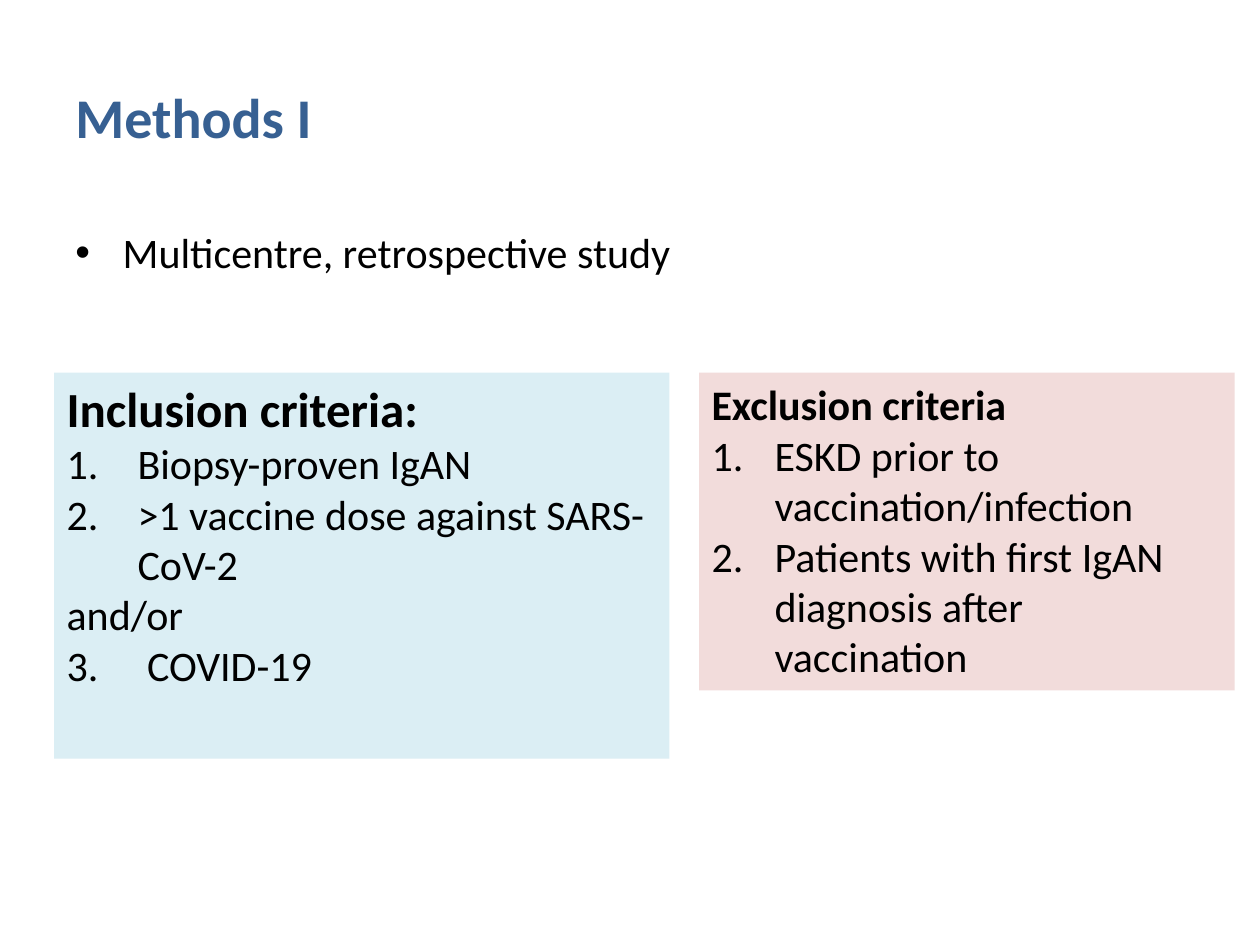
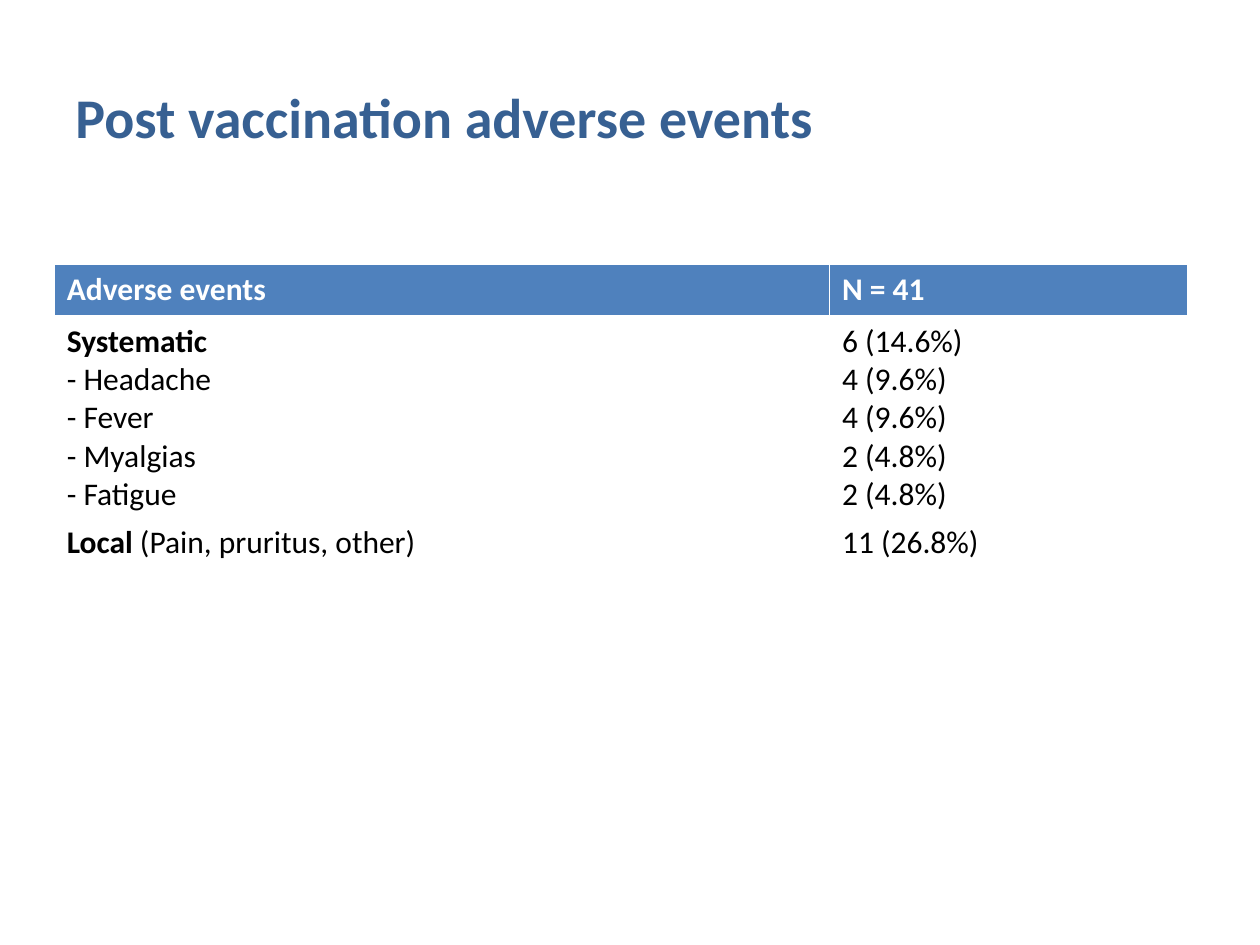
from lxml.etree import SubElement
from pptx import Presentation
from pptx.dml.color import RGBColor
from pptx.enum.shapes import MSO_SHAPE
from pptx.enum.text import MSO_ANCHOR, PP_ALIGN
from pptx.oxml.ns import qn
from pptx.util import Pt

FONT = "Calibri"
BLACK, WHITE, TITLE_BLUE = "000000", "FFFFFF", "376092"
HEADER_BLUE, INCLUSION_BLUE, EXCLUSION_PINK = "4F81BD", "DBEEF4", "F2DCDB"
LEFT, WIDTH = 36, 648
PANEL_LEFT, PANEL_TOP = 31, 213

STUDY_DESIGN = "Multicentre, retrospective study"
PANELS = [
    dict(left=PANEL_LEFT, width=351.5, height=220.5, color=INCLUSION_BLUE,
         heading="Inclusion criteria:", heading_size=28, hang=40.5,
         lines=[("1.", "Biopsy-proven IgAN"),
                ("1.", ">1 vaccine dose against SARS-CoV-2"),
                (None, "and/or"),
                (None, "3.\t COVID-19")]),
    dict(left=399.5, width=306, height=181.5, color=EXCLUSION_PINK,
         heading="Exclusion criteria", heading_size=24, hang=36,
         lines=[("1.", "ESKD prior to vaccination/infection"),
                ("1.", "Patients with first IgAN diagnosis after vaccination")]),
]

COLUMNS, ROWS = (443, 205), (29.2, 115.1, 29.2)
HEADER = ("Adverse events", "N = 41")
SYSTEMATIC = [("Systematic", "6 (14.6%)"), ("Headache", "4 (9.6%)"),
              ("Fever", "4 (9.6%)"), ("Myalgias", "2 (4.8%)"),
              ("Fatigue", "2 (4.8%)")]
LOCAL = ("Local", " (Pain, pruritus, other)", "11 (26.8%)")


def rgb(color):
    return RGBColor.from_string(color)


def add_span(para, text, size=24, color=BLACK, bold=False):
    span = para.add_run()
    span.text = text
    span.font.name = FONT
    span.font.size = Pt(size)
    span.font.bold = bold
    span.font.color.rgb = rgb(color)


def add_para(frame, text, bullet=None, hang=0, before=0, **style):
    para = frame.paragraphs[0]
    if para.runs:
        para = frame.add_paragraph()
    para.alignment = PP_ALIGN.LEFT
    para.space_before = Pt(before)
    properties = para._p.get_or_add_pPr()
    properties.set("marL", str(Pt(hang)))
    properties.set("indent", str(-Pt(hang)))
    if bullet == "1.":
        SubElement(properties, qn("a:buFont"), typeface="+mj-lt")
        SubElement(properties, qn("a:buAutoNum"), type="arabicPeriod")
    elif bullet:
        SubElement(properties, qn("a:buFont"), typeface="Arial" if bullet == "•" else FONT)
        SubElement(properties, qn("a:buChar"), char=bullet)
    add_span(para, text, **style)
    return para


def add_text_box(page, left, top, width, height, anchor=MSO_ANCHOR.TOP):
    box = page.shapes.add_textbox(Pt(left), Pt(top), Pt(width), Pt(height))
    box.text_frame.word_wrap = True
    box.text_frame.vertical_anchor = anchor
    return box.text_frame


def add_page(deck, title):
    page = deck.slides.add_slide(deck.slide_layouts[6])
    frame = add_text_box(page, LEFT, 21.6, WIDTH, 90, MSO_ANCHOR.MIDDLE)
    add_para(frame, title, size=32, color=TITLE_BLUE, bold=True)
    return page


def add_panel(page, left, width, height, color, heading, heading_size, hang, lines):
    box = page.shapes.add_shape(MSO_SHAPE.RECTANGLE, Pt(left), Pt(PANEL_TOP),
                                Pt(width), Pt(height))
    box.shadow.inherit = False
    box.fill.solid()
    box.fill.fore_color.rgb = rgb(color)
    box.line.fill.background()
    frame = box.text_frame
    frame.word_wrap = True
    frame.vertical_anchor = MSO_ANCHOR.TOP
    add_para(frame, heading, size=heading_size, bold=True)
    for bullet, text in lines:
        add_para(frame, text, bullet=bullet, hang=hang)


def build_methods(deck):
    page = add_page(deck, "Methods I")
    frame = add_text_box(page, LEFT, 126, WIDTH, 356.4)
    add_para(frame, STUDY_DESIGN, bullet="•", hang=27, before=4.8)
    for panel in PANELS:
        add_panel(page, **panel)


def build_adverse_events(deck):
    page = add_page(deck, "Post vaccination adverse events")
    table = page.shapes.add_table(len(ROWS), len(COLUMNS), Pt(PANEL_LEFT), Pt(151.2),
                                  Pt(sum(COLUMNS)), Pt(sum(ROWS))).table
    for column, width in zip(table.columns, COLUMNS):
        column.width = Pt(width)
    for number, height in enumerate(ROWS):
        table.rows[number].height = Pt(height)
        for cell in table.rows[number].cells:
            cell.fill.solid()
            cell.fill.fore_color.rgb = rgb(WHITE if number else HEADER_BLUE)

    def write(row, column, text, **style):
        return add_para(table.cell(row, column).text_frame, text, size=18, **style)

    for column, text in enumerate(HEADER):
        write(0, column, text, color=WHITE, bold=True)
    for number, (event, count) in enumerate(SYSTEMATIC):
        if number:
            write(1, 0, " " + event, bullet="-")
        else:
            write(1, 0, event, bold=True)
        write(1, 1, count)
    kind, examples, count = LOCAL
    add_span(write(2, 0, kind, bold=True), examples, size=18)
    write(2, 1, count)


def main():
    deck = Presentation()
    deck.slide_width, deck.slide_height = Pt(720), Pt(540)
    build_methods(deck)
    build_adverse_events(deck)
    deck.save("out.pptx")


if __name__ == "__main__":
    main()
